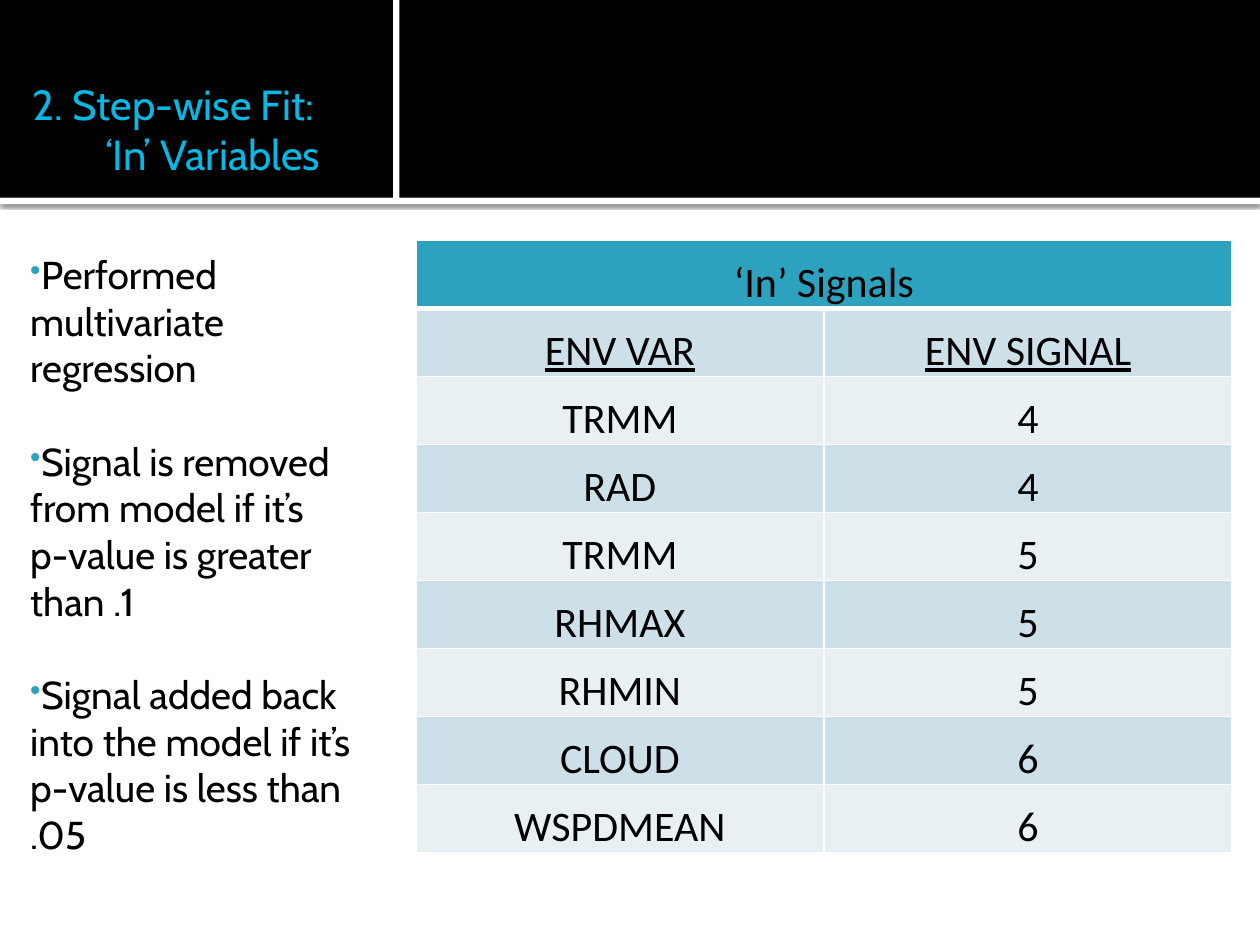
from lxml import etree
from pptx import Presentation
from pptx.dml.color import RGBColor
from pptx.enum.shapes import MSO_SHAPE
from pptx.enum.text import MSO_ANCHOR, PP_ALIGN
from pptx.oxml.ns import qn
from pptx.util import Inches, Pt

RECTANGLE = MSO_SHAPE.RECTANGLE
TOP, BOTTOM = MSO_ANCHOR.TOP, MSO_ANCHOR.BOTTOM
LEFT, CENTER = PP_ALIGN.LEFT, PP_ALIGN.CENTER

THEME = {
    "black": "000000", "white": "FFFFFF", "title": "08B8E4", "accent": "2DA2BF",
    "bands": ("CDE0E8", "E8F0F4"),
    "text_font": "Cabin", "table_font": "Calibri",
    "title_size": 24, "table_size": 24, "body_size": 22.2, "body_gap": 26.7,
}

TITLE = "2. Step-wise Fit:\v\t ‘In’ Variables"
# text, has a bullet, stands apart from the paragraph above
POINTS = [
    ("Performed multivariate regression", True, False),
    ("Signal is removed from model if it’s p-value is greater than .1", True, True),
    ("Signal added back into the model if it’s", True, True),
    ("p-value is less than .05", False, False),
]
TABLE_TITLE = "‘In’ Signals"
TABLE_ROWS = [
    ("ENV VAR", "ENV SIGNAL"),
    ("TRMM", "4"), ("RAD", "4"), ("TRMM", "5"), ("RHMAX", "5"),
    ("RHMIN", "5"), ("CLOUD", "6"), ("WSPDMEAN", "6"),
]
# left, top, width, height, colour, casts a shadow
BANDS = [
    (0, 1.57, 10, 0.05, THEME["white"], True),
    (0, 0, 10, 1.57, THEME["black"], False),
    (3.12, 0, 0.05, 1.59, THEME["white"], False),
]
TABLE_LEFT, TABLE_TOP, COLUMN_WIDTH, ROW_HEIGHT = 3.3, 1.91, 3.24, 0.54


def add_element(parent, tag, **attributes):
    element = etree.SubElement(parent, qn(tag))
    for name, value in attributes.items():
        element.set(name, str(value))
    return element


def add_shadow(shape):
    effects = shape.element.spPr.find(qn("a:effectLst"))
    shadow = add_element(effects, "a:outerShdw", blurRad=Pt(2.5), dist=Pt(0.8),
                         dir=90 * 60000, algn="t", rotWithShape=0)
    color = add_element(shadow, "a:srgbClr", val=THEME["black"])
    add_element(color, "a:alpha", val=60000)


def add_band(page, left, top, width, height, color, shadowed):
    band = page.shapes.add_shape(RECTANGLE, Inches(left), Inches(top),
                                 Inches(width), Inches(height))
    band.fill.solid()
    band.fill.fore_color.rgb = RGBColor.from_string(color)
    band.line.fill.background()
    band.shadow.inherit = False
    if shadowed:
        add_shadow(band)


def add_text_box(page, left, top, width, height, insets, anchor):
    box = page.shapes.add_textbox(Inches(left), Inches(top), Inches(width), Inches(height))
    frame = box.text_frame
    frame.word_wrap = True
    frame.vertical_anchor = anchor
    (frame.margin_left, frame.margin_top,
     frame.margin_right, frame.margin_bottom) = map(Inches, insets)
    return frame


def write(para, text, *, size, font, color=THEME["black"], align=LEFT, underline=False):
    para.text = text
    para.alignment = align
    for span in para.runs:
        span.font.size = Pt(size)
        span.font.name = font
        span.font.underline = underline
        span.font.color.rgb = RGBColor.from_string(color)


def add_bullet(para):
    properties = para._p.get_or_add_pPr()
    color = add_element(properties, "a:buClr")
    add_element(color, "a:srgbClr", val=THEME["accent"])
    add_element(properties, "a:buSzPct", val=80000)
    add_element(properties, "a:buChar", char="•")


def add_borders(cell, **widths):
    """Draw white cell borders; widths are points keyed by side: L, R, T, B."""
    properties = cell._tc.get_or_add_tcPr()
    for side in "LRTB":
        line = add_element(properties, f"a:ln{side}", w=Pt(widths.get(side, 1)))
        fill = add_element(line, "a:solidFill")
        add_element(fill, "a:srgbClr", val=THEME["white"])


def format_cell(cell, text, fill, underline=False, **borders):
    add_borders(cell, **borders)
    cell.fill.solid()
    cell.fill.fore_color.rgb = RGBColor.from_string(fill)
    cell.vertical_anchor = BOTTOM
    cell.margin_left = cell.margin_top = cell.margin_right = cell.margin_bottom = 0
    write(cell.text_frame.paragraphs[0], text, size=THEME["table_size"],
          font=THEME["table_font"], align=CENTER, underline=underline)


def add_signal_table(page):
    row_count, column_count = len(TABLE_ROWS) + 1, len(TABLE_ROWS[0])
    table = page.shapes.add_table(
        row_count, column_count, Inches(TABLE_LEFT), Inches(TABLE_TOP),
        Inches(COLUMN_WIDTH * column_count), Inches(ROW_HEIGHT * row_count)).table
    for column, text in enumerate((TABLE_TITLE, "")):
        format_cell(table.cell(0, column), text, THEME["accent"], B=3)
    table.cell(0, 0).merge(table.cell(0, column_count - 1))
    for index, values in enumerate(TABLE_ROWS):
        is_heading = index == 0
        for column, text in enumerate(values):
            format_cell(table.cell(index + 1, column), text, THEME["bands"][index % 2],
                        underline=is_heading, T=3 if is_heading else 1)


def add_points(page):
    frame = add_text_box(page, 0.18, 1.89, 2.7, 5, (0.06, 0.1, 0.1, 0.05), TOP)
    for index, (text, bulleted, apart) in enumerate(POINTS):
        para = frame.add_paragraph() if index else frame.paragraphs[0]
        write(para, text, size=THEME["body_size"], font=THEME["text_font"])
        para.space_before = Pt(THEME["body_gap"] if apart else 0)
        if bulleted:
            add_bullet(para)


def main():
    deck = Presentation()
    deck.slide_width, deck.slide_height = Inches(10), Inches(7.5)
    page = deck.slides.add_slide(deck.slide_layouts[6])
    for band in BANDS:
        add_band(page, *band)
    title = add_text_box(page, 0.18, 0.17, 2.98, 1.25, (0.08, 0.05, 0.05, 0), BOTTOM)
    write(title.paragraphs[0], TITLE, size=THEME["title_size"],
          font=THEME["text_font"], color=THEME["title"])
    add_signal_table(page)
    add_points(page)
    deck.save("out.pptx")


if __name__ == "__main__":
    main()
